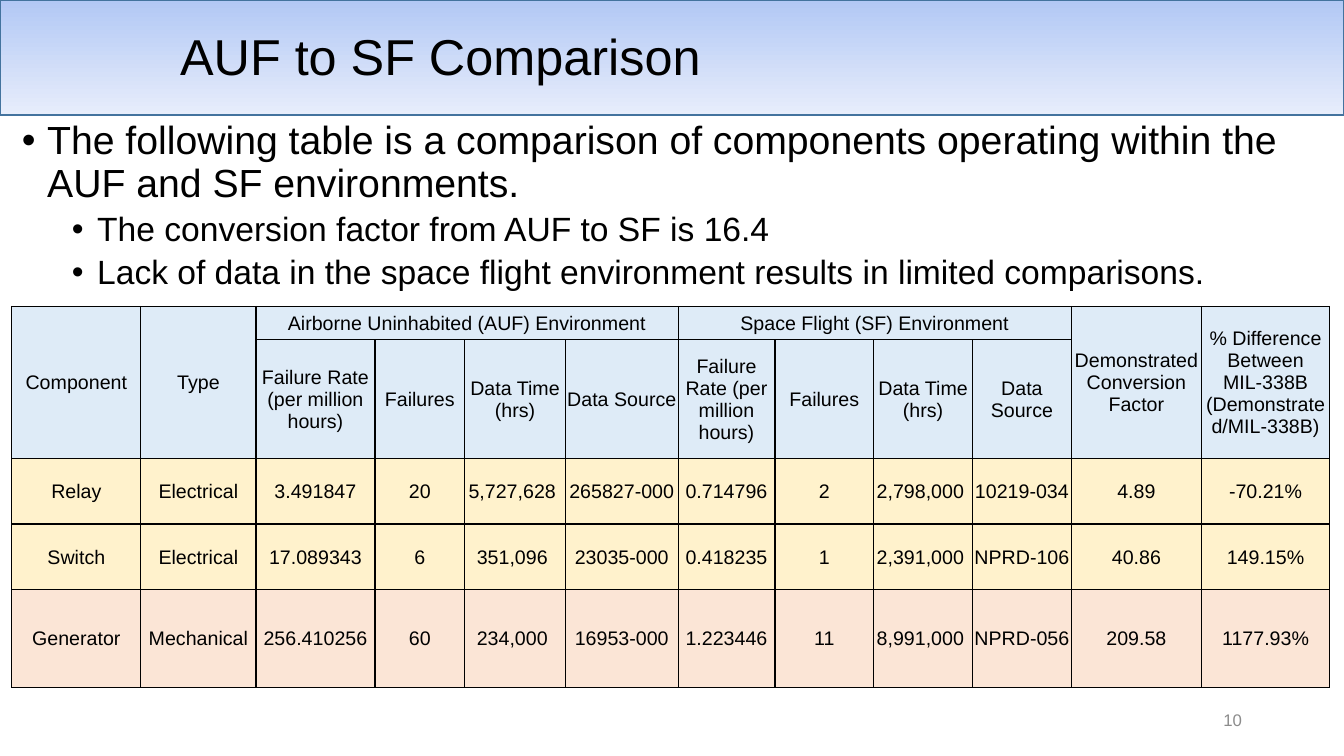
from typing import NamedTuple

from lxml import etree
from pptx import Presentation
from pptx import util as u
from pptx.dml.color import RGBColor
from pptx.enum import shapes, text
from pptx.oxml import ns

FONT = "Arial"
BLACK = RGBColor(0x00, 0x00, 0x00)
WHITE_BLUE = RGBColor(0xE7, 0xED, 0xFB)
BANNER_BLUE = RGBColor(0xB2, 0xC8, 0xF5)
BANNER_EDGE = RGBColor(0x43, 0x73, 0x9E)
NUMBER_GREY = RGBColor(0x8C, 0x8C, 0x8C)
HEADER_BLUE = RGBColor(0xDE, 0xEB, 0xF7)
ELECTRICAL_YELLOW = RGBColor(0xFF, 0xF2, 0xCC)
MECHANICAL_ORANGE = RGBColor(0xFB, 0xE5, 0xD6)


class Area(NamedTuple):
    """Left, top, width and height in centimetres."""
    left: float
    top: float
    width: float
    height: float

    def lengths(self) -> list:
        return [u.Cm(value) for value in self]


class Bullet(NamedTuple):
    words: str
    level: int
    size: int
    indent: float
    space_before: int


class TableRow(NamedTuple):
    height: float
    fill: RGBColor
    cells: list


class Span(NamedTuple):
    """First and last cell of a merge, as (row, column)."""
    first: tuple
    last: tuple


BULLETS = [
    Bullet("The following table is a comparison of components operating within "
           "the AUF and SF environments.", 0, 28, 0.64, 0),
    Bullet("The conversion factor from AUF to SF is 16.4", 1, 24, 1.9, 5),
    Bullet("Lack of data in the space flight environment results in limited "
           "comparisons.", 1, 24, 1.9, 5),
]
HANGING = 0.64

COLUMN_WIDTHS = [3.25, 2.9, 3.0, 2.26, 2.54, 2.84, 2.44, 2.49, 2.49, 2.49, 3.28, 3.23]
MEASURES = ["Failure Rate (per million hours)", "Failures", "Data Time (hrs)", "Data Source"]
ROWS = [
    TableRow(0.84, HEADER_BLUE, [
        "Component", "Type",
        "Airborne Uninhabited (AUF) Environment", "", "", "",
        "Space Flight (SF) Environment", "", "", "",
        "Demonstrated Conversion Factor",
        "% Difference Between MIL-338B (Demonstrated/MIL-338B)"]),
    TableRow(1.85, HEADER_BLUE, ["", "", *MEASURES, *MEASURES, "", ""]),
    TableRow(1.65, ELECTRICAL_YELLOW, [
        "Relay", "Electrical", "3.491847", "20", "5,727,628 ", "265827-000",
        "0.714796", "2", "2,798,000 ", "10219-034", "4.89", "-70.21%"]),
    TableRow(1.65, ELECTRICAL_YELLOW, [
        "Switch", "Electrical", "17.089343", "6", "351,096 ", "23035-000",
        "0.418235", "1", "2,391,000 ", "NPRD-106", "40.86", "149.15%"]),
    TableRow(2.46, MECHANICAL_ORANGE, [
        "Generator", "Mechanical", "256.410256", "60", "234,000 ", "16953-000",
        "1.223446", "11", "8,991,000 ", "NPRD-056", "209.58", "1177.93%"]),
]
SPANS = [Span((0, column), (1, column)) for column in (0, 1, 10, 11)]
SPANS += [Span((0, column), (0, column + 3)) for column in (2, 6)]


def set_font(para, size: int, color: RGBColor = BLACK) -> None:
    para.font.name = FONT
    para.font.size = u.Pt(size)
    para.font.color.rgb = color


def add_banner(page, area: Area) -> None:
    banner = page.shapes.add_shape(shapes.MSO_SHAPE.RECTANGLE, *area.lengths())
    banner.shadow.inherit = False
    banner.fill.gradient()
    banner.fill.gradient_angle = 270
    for stop, color in zip(banner.fill.gradient_stops, (BANNER_BLUE, WHITE_BLUE)):
        stop.color.rgb = color
    banner.line.color.rgb = BANNER_EDGE
    banner.line.width = u.Pt(1)


def add_text_frame(page, area: Area, anchor):
    frame = page.shapes.add_textbox(*area.lengths()).text_frame
    frame.word_wrap = True
    frame.vertical_anchor = anchor
    return frame


def add_line(page, area: Area, words: str, size: int, color: RGBColor, alignment) -> None:
    """Add one vertically centred line of text."""
    para = add_text_frame(page, area, text.MSO_ANCHOR.MIDDLE).paragraphs[0]
    para.text = words
    para.alignment = alignment
    para.line_spacing = 0.9
    set_font(para, size, color)


def add_bullets(page, area: Area, bullets: list[Bullet]) -> None:
    frame = add_text_frame(page, area, text.MSO_ANCHOR.TOP)
    for index, bullet in enumerate(bullets):
        para = frame.add_paragraph() if index else frame.paragraphs[0]
        para.text = bullet.words
        para.level = bullet.level
        para.line_spacing = 0.9
        para.space_before = u.Pt(bullet.space_before)
        properties = para._p.get_or_add_pPr()
        properties.set("marL", str(u.Cm(bullet.indent)))
        properties.set("indent", str(-u.Cm(HANGING)))
        etree.SubElement(properties, ns.qn("a:buFont"), typeface=FONT)
        etree.SubElement(properties, ns.qn("a:buChar"), char="•")
        set_font(para, bullet.size)


def add_borders(cell) -> None:
    properties = cell._tc.get_or_add_tcPr()
    for side in ("L", "R", "T", "B"):
        line = etree.SubElement(properties, ns.qn(f"a:ln{side}"), w=str(u.Pt(1)))
        fill = etree.SubElement(line, ns.qn("a:solidFill"))
        etree.SubElement(fill, ns.qn("a:srgbClr"), val=str(BLACK))


def fill_cell(cell, words: str, color: RGBColor) -> None:
    add_borders(cell)
    cell.fill.solid()
    cell.fill.fore_color.rgb = color
    cell.margin_left = cell.margin_right = cell.margin_top = u.Cm(0.03)
    cell.margin_bottom = 0
    cell.vertical_anchor = text.MSO_ANCHOR.MIDDLE
    para = cell.text_frame.paragraphs[0]
    para.text = words
    para.alignment = text.PP_ALIGN.CENTER
    set_font(para, 14)


def add_comparison_table(page, area: Area) -> None:
    frame = page.shapes.add_table(len(ROWS), len(COLUMN_WIDTHS), *area.lengths())
    table = frame.table
    table.first_row = table.horz_banding = False
    for column, width in zip(table.columns, COLUMN_WIDTHS):
        column.width = u.Cm(width)
    for row, content in zip(table.rows, ROWS):
        row.height = u.Cm(content.height)
        for cell, words in zip(row.cells, content.cells):
            fill_cell(cell, words, content.fill)
    for span in SPANS:
        table.cell(*span.first).merge(table.cell(*span.last))
    frame.height = u.Cm(area.height)


def main() -> None:
    deck = Presentation()
    deck.slide_width, deck.slide_height = u.Cm(33.87), u.Cm(19.05)
    page = deck.slides.add_slide(deck.slide_layouts[6])
    add_banner(page, Area(0, 0, 33.87, 2.9))
    add_line(page, Area(4.29, 0.51, 29.21, 1.96), "AUF to SF Comparison", 36, BLACK,
             text.PP_ALIGN.LEFT)
    add_bullets(page, Area(0.3, 2.92, 33.22, 6.02), BULLETS)
    add_line(page, Area(23.93, 17.65, 7.62, 1.02), "10", 12, NUMBER_GREY,
             text.PP_ALIGN.RIGHT)
    add_comparison_table(page, Area(0.3, 7.72, 33.22, 8.99))
    deck.save("out.pptx")


if __name__ == "__main__":
    main()
